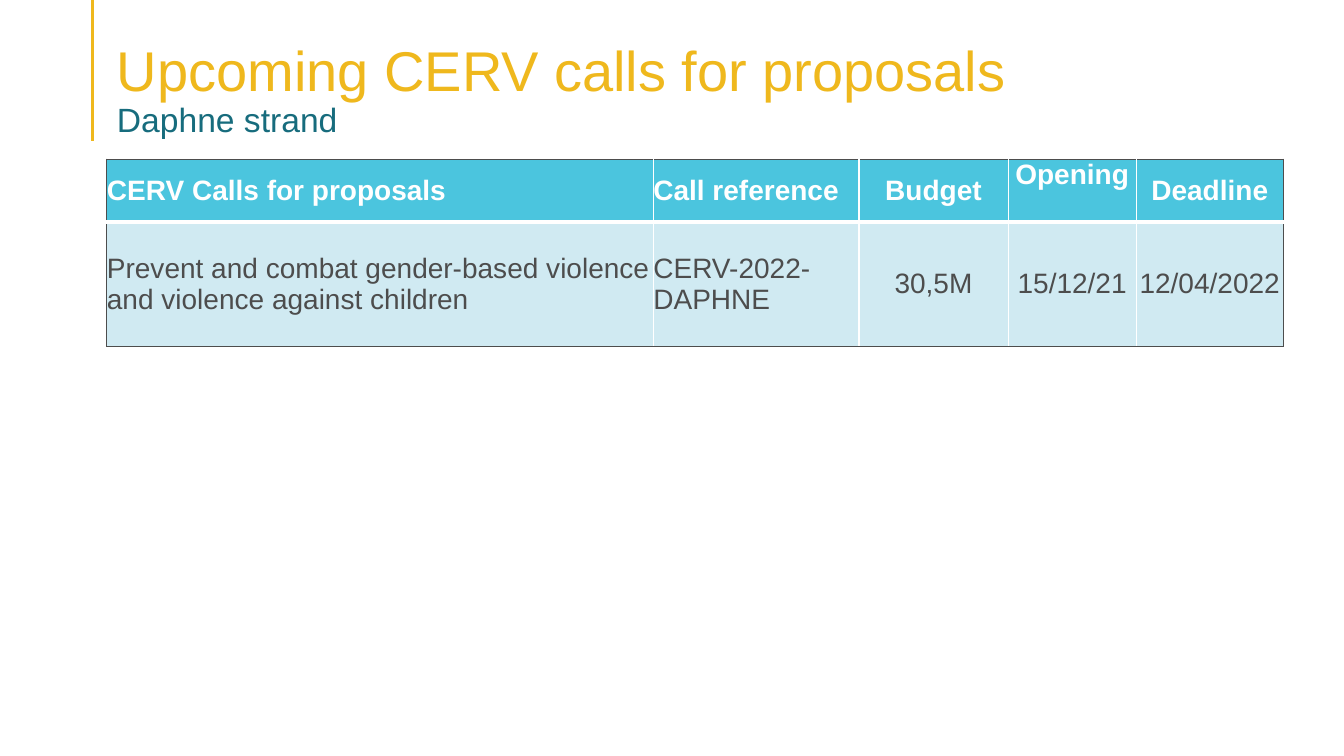
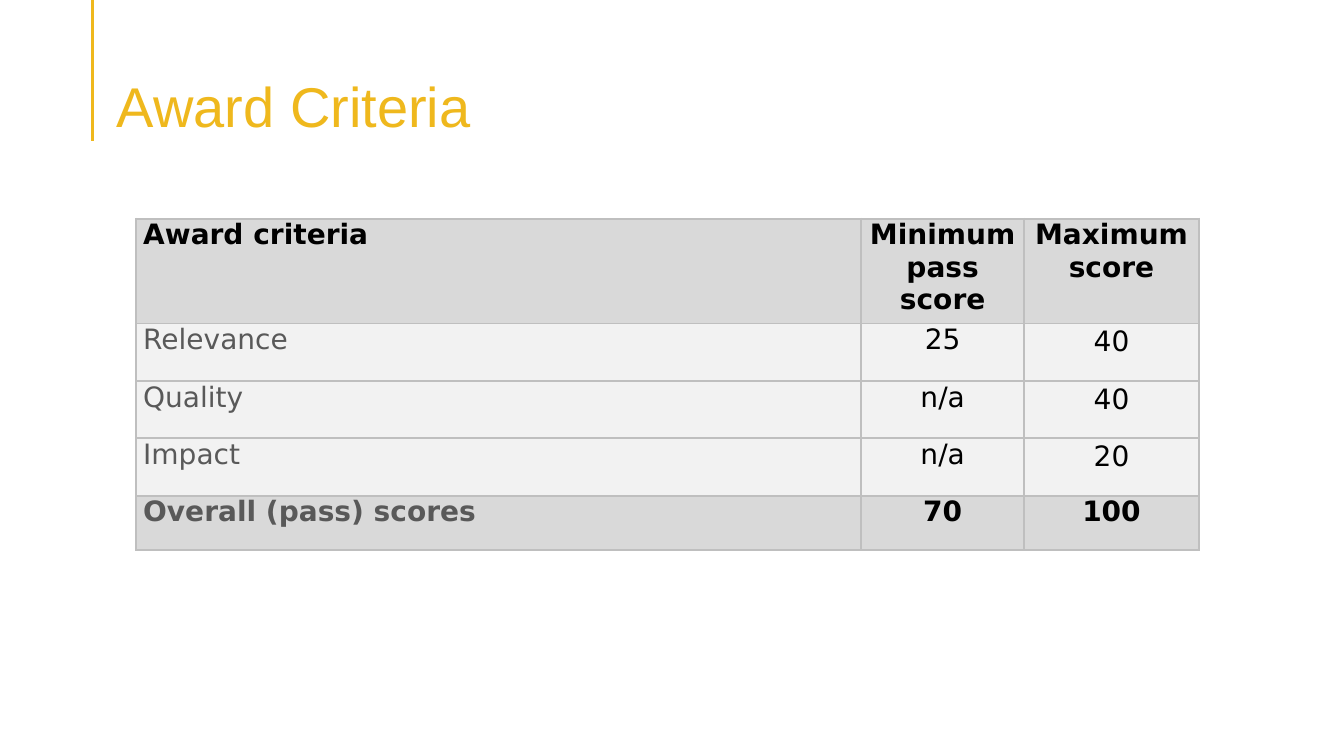
import pptx
import pptx.util
import pptx.dml.color
import pptx.enum.shapes
import pptx.enum.text
import pptx.oxml
import pptx.oxml.ns

Inches = pptx.util.Inches
ALIGN = pptx.enum.text.PP_ALIGN
ANCHOR = pptx.enum.text.MSO_ANCHOR
COLORS = {
    "gold": "EFB81D", "teal": "176C7D", "white": "FFFFFF", "black": "000000",
    "dark": "4D4D4D", "cyan": "4BC5DE", "pale": "D0EAF2",
    "label": "595959", "rule": "BFBFBF", "band": "D9D9D9", "row": "F2F2F2",
}


def write(para, text, size=20, font="Arial", color="black", bold=False,
          align=ALIGN.LEFT, spacing=None, after=0):
    para.alignment = align
    para.line_spacing = spacing
    para.space_after = pptx.util.Pt(after)
    span = para.add_run()
    span.text = text
    span.font.size = pptx.util.Pt(size)
    span.font.name = font
    span.font.bold = bold
    span.font.color.rgb = pptx.dml.color.RGBColor.from_string(COLORS[color])


def style_cell(cell, fill, borders, anchor, side_margin):
    cell.margin_left = cell.margin_right = Inches(side_margin)
    cell.margin_top = cell.margin_bottom = 0
    cell.vertical_anchor = anchor
    properties = cell._tc.get_or_add_tcPr()
    for side, (color, width) in zip("LRTB", borders):
        properties.append(pptx.oxml.parse_xml(
            f'<a:ln{side} {pptx.oxml.ns.nsdecls("a")} w="{pptx.util.Pt(width)}">'
            f'<a:solidFill><a:srgbClr val="{COLORS[color]}"/></a:solidFill></a:ln{side}>'))
    cell.fill.solid()
    cell.fill.fore_color.rgb = pptx.dml.color.RGBColor.from_string(COLORS[fill])


deck = pptx.Presentation()
deck.slide_width, deck.slide_height = Inches(13.33), Inches(7.5)

pages = [
    {
        "title": "Upcoming CERV calls for proposals", "subtitle": "Daphne strand",
        "left": 1.06, "top": 1.58,
        "columns": [5.42, 2.04, 1.48, 1.27, 1.46], "heights": [0.62, 1.24],
        "cells": [
            ["CERV Calls for proposals", "Call reference", "Budget", "Opening", "Deadline"],
            ["Prevent and combat gender-based violence and violence against children",
             "CERV-2022-DAPHNE", "30,5M", "15/12/21", "12/04/2022"],
        ],
    },
    {
        "title": "Award Criteria", "subtitle": None,
        "left": 1.35, "top": 2.17,
        "columns": [7.19, 1.62, 1.73], "heights": [1.04, 0.57, 0.57, 0.57, 0.54],
        "cells": [
            ["Award criteria", "Minimum pass score", "Maximum score"],
            ["Relevance", "25", "40"],
            ["Quality", "n/a", "40"],
            ["Impact", "n/a", "20"],
            ["Overall (pass) scores", "70", "100"],
        ],
    },
]

tables = []
for page in pages:
    slide = deck.slides.add_slide(deck.slide_layouts[5])
    accent = slide.shapes.add_connector(
        pptx.enum.shapes.MSO_CONNECTOR.STRAIGHT,
        Inches(0.92), 0, Inches(0.92), Inches(1.4))
    accent.line.color.rgb = pptx.dml.color.RGBColor.from_string(COLORS["gold"])
    accent.line.width = pptx.util.Pt(2.25)
    accent._element.spPr.append(
        pptx.oxml.parse_xml(f'<a:effectLst {pptx.oxml.ns.nsdecls("a")}/>'))

    title = slide.shapes.title
    title.left, title.top = Inches(1.06), Inches(0.53)
    title.width, title.height = Inches(11.5), Inches(0.86)
    frame = title.text_frame
    frame.auto_size = pptx.enum.text.MSO_AUTO_SIZE.NONE
    frame.word_wrap = True
    frame.vertical_anchor = ANCHOR.BOTTOM
    frame.margin_left = frame.margin_right = Inches(0.1)
    frame.margin_top, frame.margin_bottom = Inches(0.05), 0
    para = frame.paragraphs[0]
    write(para, page["title"], size=40, color="gold", spacing=0.9)
    if page["subtitle"]:
        para.add_line_break()
        write(para, page["subtitle"], size=24, color="teal", spacing=0.9)

    table = slide.shapes.add_table(
        len(page["heights"]), len(page["columns"]),
        Inches(page["left"]), Inches(page["top"]),
        Inches(sum(page["columns"])), Inches(sum(page["heights"]))).table
    table.first_row = table.horz_banding = False
    for column, width in zip(table.columns, page["columns"]):
        column.width = Inches(width)
    for row, height in zip(table.rows, page["heights"]):
        row.height = Inches(height)
    tables.append(table)

calls, criteria = tables

for r, texts in enumerate(pages[0]["cells"]):
    header = r == 0
    for c, text in enumerate(texts):
        cell = calls.cell(r, c)
        borders = [
            ("dark" if c == 0 else "white", 1),
            ("dark" if c == len(texts) - 1 else "white", 1),
            ("dark", 1) if header else ("white", 3),
            ("white", 3) if header else ("dark", 1),
        ]
        style_cell(cell, "cyan" if header else "pale", borders,
                   ANCHOR.TOP if text == "Opening" else ANCHOR.MIDDLE, 0)
        write(cell.text_frame.paragraphs[0], text, bold=header,
              color="white" if header else "dark",
              align=ALIGN.LEFT if c < 2 else ALIGN.CENTER)

last = len(pages[1]["cells"]) - 1
for r, texts in enumerate(pages[1]["cells"]):
    strong = r in (0, last)
    for c, text in enumerate(texts):
        cell = criteria.cell(r, c)
        style_cell(cell, "band" if strong else "row", [("rule", 1.5)] * 4, ANCHOR.TOP, 0.07)
        write(cell.text_frame.paragraphs[0], text, font="DejaVu Sans", bold=strong,
              color="label" if c == 0 and r > 0 else "black",
              align=ALIGN.JUSTIFY if c == 0 else ALIGN.CENTER,
              spacing=1.07 if c == 2 and not strong else None, after=6)

deck.save("out.pptx")
